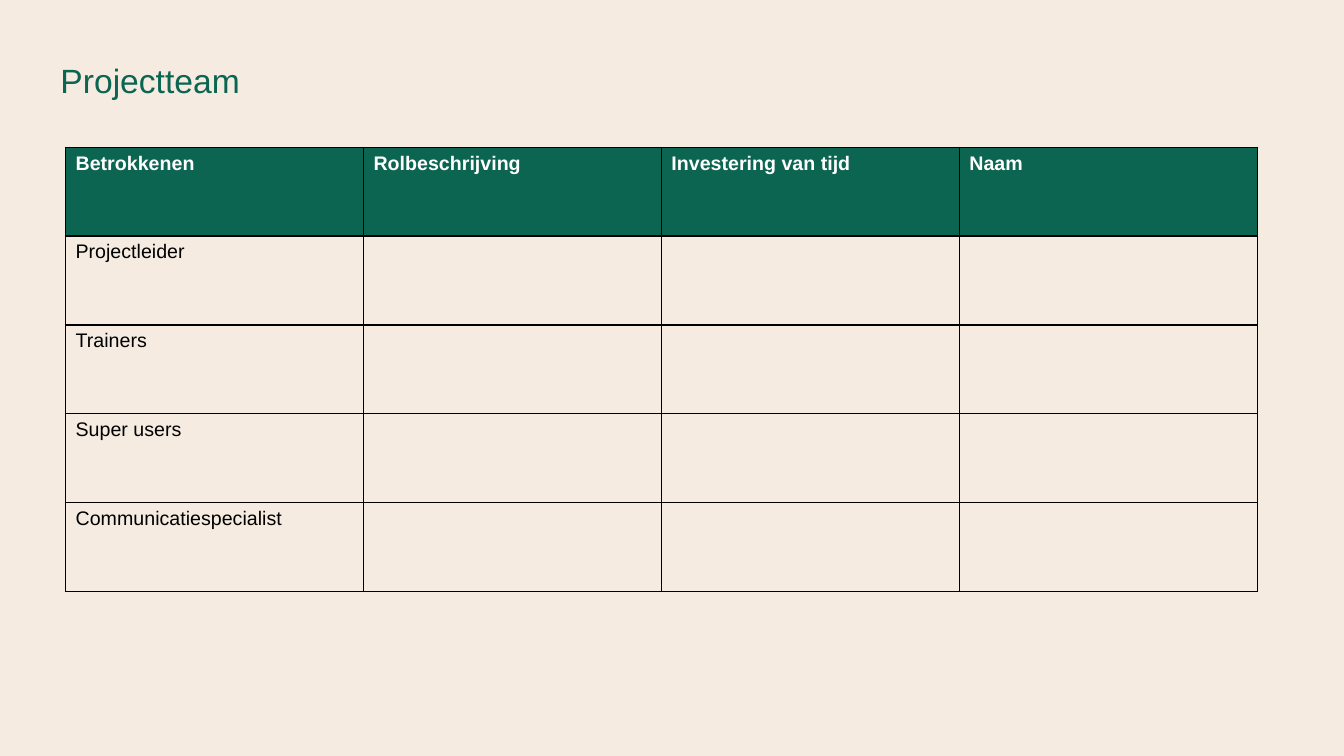
import pptx
import pptx.dml.color
import pptx.enum.text
import pptx.oxml
import pptx.oxml.ns
import pptx.util
from pptx.util import Inches

COLORS = {
    "background": "F5EBE1",
    "green": "0B6551",
    "white": "FFFFFF",
    "black": "000000",
}
HEADERS = ["Betrokkenen", "Rolbeschrijving", "Investering van tijd", "Naam"]
ROLES = ["Projectleider", "Trainers", "Super users", "Communicatiespecialist"]


def rgb(name):
    return pptx.dml.color.RGBColor.from_string(COLORS[name])


class SlideBuilder:
    font_name = "Arial"

    def __init__(self, slide):
        self.slide = slide

    def background(self, color):
        fill = self.slide.background.fill
        fill.solid()
        fill.fore_color.rgb = rgb(color)

    def format_text(self, paragraph, size, color, bold=False):
        paragraph.alignment = pptx.enum.text.PP_ALIGN.LEFT
        font = paragraph.font
        font.name = self.font_name
        font.size = pptx.util.Pt(size)
        font.bold = bold
        font.color.rgb = rgb(color)

    def title(self, text, left, top, width, height):
        shape = self.slide.shapes.title
        shape.left, shape.top = Inches(left), Inches(top)
        shape.width, shape.height = Inches(width), Inches(height)
        frame = shape.text_frame
        frame.text = text
        frame.word_wrap = True
        frame.vertical_anchor = pptx.enum.text.MSO_ANCHOR.MIDDLE
        self.format_text(frame.paragraphs[0], 24, "green")

    def cell_borders(self, cell, color, width):
        properties = cell._tc.get_or_add_tcPr()
        for position, side in enumerate(("lnL", "lnR", "lnT", "lnB")):
            line = pptx.oxml.parse_xml(
                f'<a:{side} {pptx.oxml.ns.nsdecls("a")} w="{pptx.util.Pt(width)}">'
                f'<a:solidFill><a:srgbClr val="{COLORS[color]}"/></a:solidFill>'
                f'</a:{side}>'
            )
            properties.insert(position, line)

    def table(self, rows, left, top, width, height):
        table = self.slide.shapes.add_table(
            len(rows), len(rows[0]),
            Inches(left), Inches(top), Inches(width), Inches(height),
        ).table
        for row_index, row in enumerate(rows):
            is_header = row_index == 0
            for column_index, text in enumerate(row):
                cell = table.cell(row_index, column_index)
                cell.text = text
                cell.fill.solid()
                cell.fill.fore_color.rgb = rgb("green" if is_header else "background")
                self.format_text(cell.text_frame.paragraphs[0], 14,
                                 "white" if is_header else "black", is_header)
                self.cell_borders(cell, "black", 1)


def main():
    presentation = pptx.Presentation()
    presentation.slide_width = Inches(13.33)
    presentation.slide_height = Inches(7.5)
    title_only = presentation.slide_layouts[5]
    builder = SlideBuilder(presentation.slides.add_slide(title_only))

    # Background and title
    builder.background("background")
    builder.title("Projectteam", 0.5, 0.54, 11.16, 0.5)

    # Project team table: only the first column is filled in
    blanks = [""] * (len(HEADERS) - 1)
    rows = [HEADERS] + [[role] + blanks for role in ROLES]
    builder.table(rows, 0.65, 1.46, 11.82, 4.41)

    presentation.save("out.pptx")


if __name__ == "__main__":
    main()
